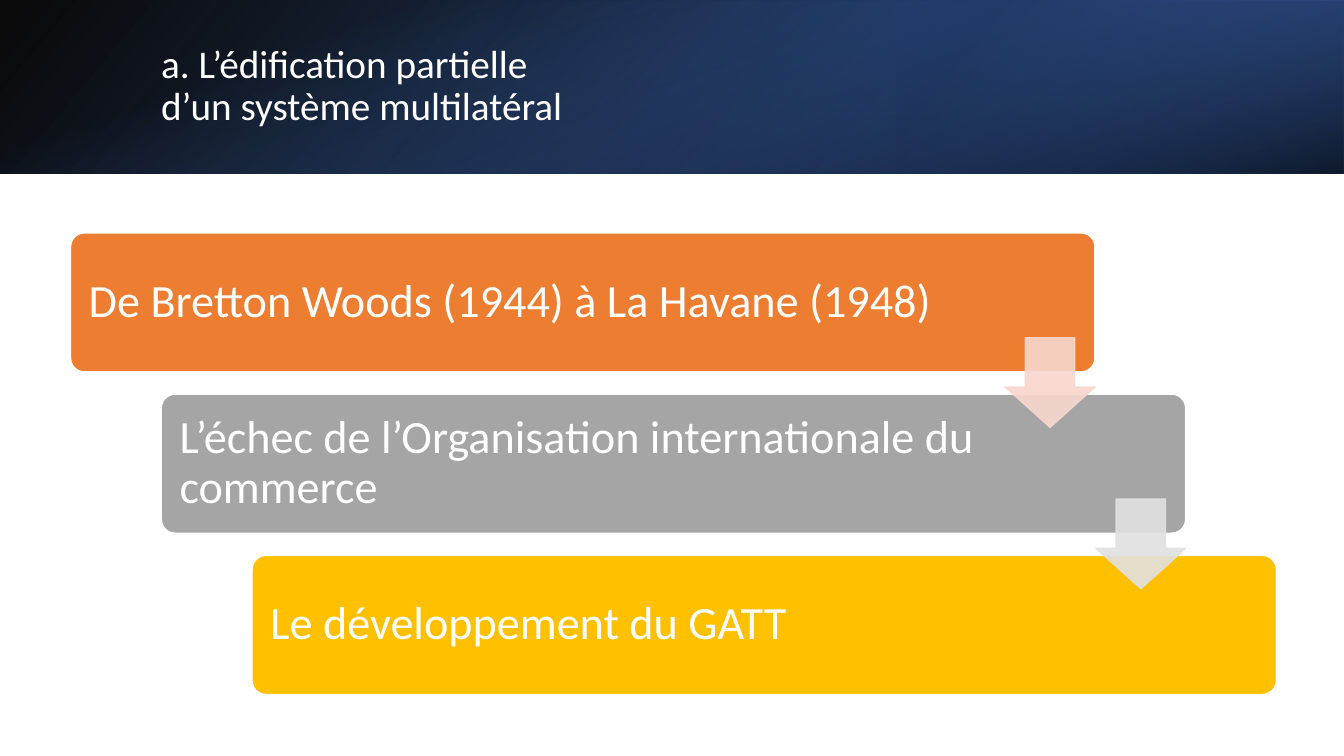
from pptx import Presentation
from pptx.dml.color import RGBColor
from pptx.enum import shapes, text
from pptx.oxml.ns import qn
from pptx.util import Inches, Pt

BLACK = RGBColor(0x00, 0x00, 0x00)
WHITE = RGBColor(0xFF, 0xFF, 0xFF)
BLUE = RGBColor(0x44, 0x72, 0xC4)
MID_BLUE = RGBColor(0x2F, 0x55, 0x97)
DARK_BLUE = RGBColor(0x20, 0x38, 0x64)
ORANGE = RGBColor(0xED, 0x7D, 0x31)
GREY = RGBColor(0xA5, 0xA5, 0xA5)
GOLD = RGBColor(0xFF, 0xC0, 0x00)
PALE_ORANGE = RGBColor(0xF8, 0xD7, 0xCE)
PALE_GREY = RGBColor(0xE1, 0xE1, 0xE1)

SHAPE = shapes.MSO_SHAPE
STEP_RIGHT, STEP_DOWN = 0.9, 1.6
# wording, bar colour, width of the text, colour of the arrow to the next step
STEPS = [
    ("De Bretton Woods (1944) à La Havane (1948)", ORANGE, 8.67, PALE_ORANGE),
    ("L’échec de l’Organisation internationale du commerce", GREY, 8.29, PALE_GREY),
    ("Le développement du GATT", GOLD, 8.29, None),
]


def set_opacity(shape, *percents):
    """Give the shape's colours, in the order of their XML, these opacities."""
    colours = shape._element.spPr.iter(qn("a:srgbClr"))
    for colour, percent in zip(list(colours), percents):
        alpha = colour.makeelement(qn("a:alpha"), {"val": str(percent * 1000)})
        colour.append(alpha)


def add_shape(slide, kind, left, top, width, height, adjustments=()):
    shape = slide.shapes.add_shape(
        kind, Inches(left), Inches(top), Inches(width), Inches(height))
    shape.shadow.inherit = False
    for index, value in enumerate(adjustments):
        shape.adjustments[index] = value
    return shape


def paint(shape, fill, line):
    shape.fill.solid()
    shape.fill.fore_color.rgb = fill
    shape.line.color.rgb = line
    shape.line.width = Pt(1)


def add_gradient(slide, box, stops, angle, rotation=0, flip=False):
    """Add a rectangle with (position, colour, opacity) stops, angle clockwise."""
    band = add_shape(slide, SHAPE.RECTANGLE, *box)
    band.rotation = rotation
    if flip:
        band._element.spPr.get_or_add_xfrm().set("flipH", "1")
    band.line.fill.background()
    band.fill.gradient()
    band.fill.gradient_angle = 360 - angle
    for stop, (position, colour, _) in zip(band.fill.gradient_stops, stops):
        stop.position = position
        stop.color.rgb = colour
    set_opacity(band, *(opacity for _, _, opacity in stops))


def add_text(slide, wording, left, top, width, height, *, size,
             inset_x=0.1, inset_y=0.05):
    box = slide.shapes.add_textbox(
        Inches(left), Inches(top), Inches(width), Inches(height))
    frame = box.text_frame
    frame.word_wrap = True
    frame.vertical_anchor = text.MSO_ANCHOR.MIDDLE
    frame.margin_left = frame.margin_right = Inches(inset_x)
    frame.margin_top = frame.margin_bottom = Inches(inset_y)
    paragraph = frame.paragraphs[0]
    paragraph.text = wording
    paragraph.line_spacing = 0.9
    for run in paragraph.runs:
        run.font.name = "Calibri"
        run.font.size = Pt(size)
        run.font.color.rgb = WHITE


def add_header(slide):
    add_gradient(slide, (0, 0, 13.33, 1.72),
                 [(0, BLACK, 96), (1, MID_BLUE, 100)], 140, flip=True)
    add_gradient(slide, (8.89, 0, 4.44, 1.72),
                 [(0.19, DARK_BLUE, 68), (1, BLUE, 79)], 320,
                 rotation=180, flip=True)
    add_gradient(slide, (5.8, -5.8, 1.72, 13.33),
                 [(0.23, BLUE, 0), (0.99, BLACK, 74)], 340, rotation=90)
    add_text(slide, "a. L’édification partielle \vd’un système multilatéral",
             1.5, 0.38, 10.98, 0.96, size=28)


def add_step(slide, left, top, wording, colour, text_width):
    bar = add_shape(slide, SHAPE.ROUNDED_RECTANGLE, left, top, 10.16, 1.38, [0.1])
    paint(bar, colour, WHITE)
    add_text(slide, wording, left + 0.04, top + 0.04, text_width, 1.3,
             size=33, inset_x=0.14, inset_y=0.14)


def add_arrow(slide, left, top, colour):
    arrow = add_shape(slide, SHAPE.DOWN_ARROW, left, top, 0.89, 0.89)
    arrow.adjustments[0] = 0.45
    arrow.adjustments[1] = 0.55
    # The first guide is the shaft width, the second the head length.
    arrow.adjustments[0], arrow.adjustments[1] = 0.55, 0.45
    paint(arrow, colour, colour)
    set_opacity(arrow, 90, 90)


def main():
    deck = Presentation()
    deck.slide_width, deck.slide_height = Inches(13.33), Inches(7.5)
    slide = deck.slides.add_slide(deck.slide_layouts[6])
    add_header(slide)
    for index, (wording, colour, text_width, _) in enumerate(STEPS):
        add_step(slide, 0.7 + index * STEP_RIGHT, 2.31 + index * STEP_DOWN,
                 wording, colour, text_width)
    for index, (_, _, _, arrow_colour) in enumerate(STEPS[:-1]):
        add_arrow(slide, 9.97 + index * STEP_RIGHT, 3.35 + index * STEP_DOWN,
                  arrow_colour)
    deck.save("out.pptx")


if __name__ == "__main__":
    main()
